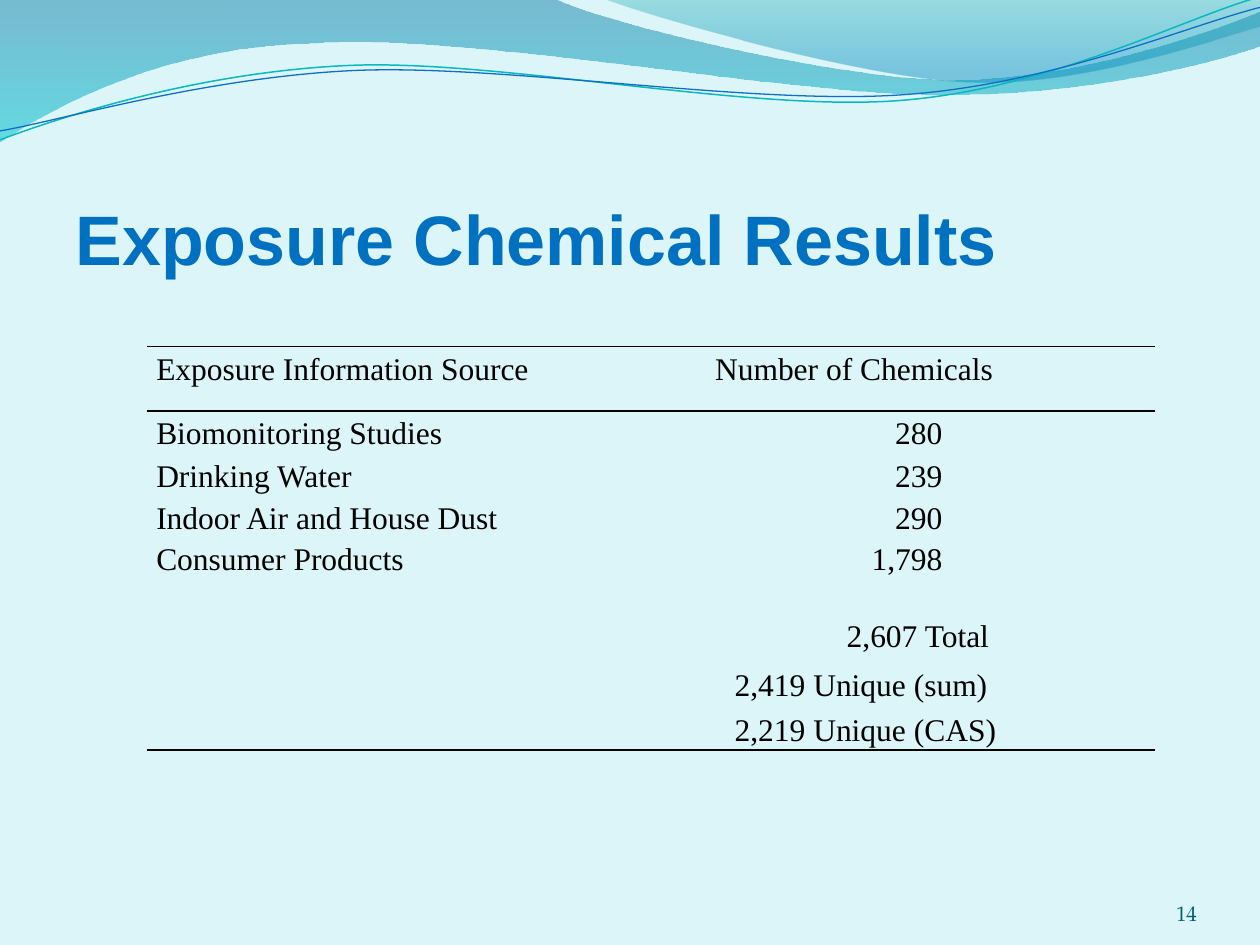
import lxml.etree
import pptx
import pptx.dml.color
import pptx.enum.text
import pptx.oxml.ns
import pptx.util

Cm, Pt = pptx.util.Cm, pptx.util.Pt
ALIGN, ANCHOR = pptx.enum.text.PP_ALIGN, pptx.enum.text.MSO_ANCHOR
qn = pptx.oxml.ns.qn

SERIF = "Times New Roman"
NO_GRID_STYLE = "{2D5ABB26-0587-4C30-8999-92F81FD0307C}"

# Outlines in cm: a start point, then straight steps (1 point) or curves (3 points)
BROAD_WAVE = [
    (0, 0), [(11.18, -0.03)],
    [(12.09, 0.43), (16.87, 1.6), (19.25, 1.6)],
    [(21.67, 1.6), (24.33, 0.66), (25.4, 0.23)],
    [(25.43, 0.91)],
    [(24.97, 1.12), (22.1, 1.93), (18.95, 1.91)],
    [(15.8, 1.91), (9.7, 0.71), (6.53, 0.86)],
    [(3.28, 0.91), (1.17, 2.11), (-0.03, 2.87)],
]
RIGHT_WAVE = [
    (12.17, -0.03),
    [(12.93, 0.28), (17.32, 1.57), (19.53, 1.65)],
    [(21.74, 1.75), (24.41, 0.81), (25.4, 0.53)],
    [(25.4, 0)],
]
TEAL_STRAND = [
    (0, 2.82),
    [(1.22, 2.36), (4.01, 1.45), (7.04, 1.32)],
    [(10.03, 1.19), (15.06, 2.26), (18.11, 2.03)],
    [(21.16, 1.8), (23.83, 0.38), (25.35, -0.05)],
]
BLUE_STRAND = [
    (0, 2.64),
    [(1.19, 2.44), (4.17, 1.55), (7.19, 1.42)],
    [(10.24, 1.3), (15.16, 2.13), (18.21, 1.91)],
    [(21.23, 1.7), (23.9, 0.53), (25.4, 0.15)],
]

# Source, count, row height, alignment, left and right margin of the count (cm)
ROWS = [
    ("Exposure Information Source", "Number of Chemicals", 1.3, ALIGN.CENTER, 0.19, 0.19),
    ("Biomonitoring Studies", "280", 0.87, ALIGN.RIGHT, 0.19, 4.28),
    ("Drinking Water", "239", 0.85, ALIGN.RIGHT, 0.19, 4.28),
    ("Indoor Air and House Dust", "290", 0.82, ALIGN.RIGHT, 0.19, 4.28),
    ("Consumer Products", "1,798", 0.84, ALIGN.RIGHT, 0.19, 4.28),
    ("", "", 0.71, ALIGN.LEFT, 0.19, 0.19),
    ("", "2,607 Total", 0.99, ALIGN.RIGHT, 0.19, 3.34),
    ("", "2,419 Unique (sum)", 0.91, ALIGN.LEFT, 3.65, 0.19),
    ("", "2,219 Unique (CAS)", 0.84, ALIGN.LEFT, 3.65, 0.19),
]


def colour(hex_string):
    return pptx.dml.color.RGBColor.from_string(hex_string)


def add_run(paragraph, text, font, size, hex_string, bold=False):
    run = paragraph.add_run()
    run.text = text
    run.font.name, run.font.size, run.font.bold = font, Pt(size), bold
    run.font.color.rgb = colour(hex_string)


def add_outline(slide, left, top, outline, close):
    start, *steps = outline
    place = lambda point: (Cm(left + point[0]), Cm(top + point[1]))
    builder = slide.shapes.build_freeform(*place(start))
    builder.add_line_segments([place(p) for step in steps for p in step], close=close)
    shape = builder.convert_to_shape()
    shape.shadow.inherit = False

    # Join the three points of each curved step into one Bézier segment
    segments = iter(list(shape.element.iter(qn("a:lnTo"))))
    for step in steps:
        first, *others = [next(segments) for _ in step]
        if others:
            first.addprevious(curve := lxml.etree.Element(qn("a:cubicBezTo")))
            for segment in (first, *others):
                curve.append(segment[0])
                segment.getparent().remove(segment)
    return shape


def add_waves(slide, left, top):
    # Translucent waves: position, colour and opacity of each gradient stop
    for outline, stops in [
        (BROAD_WAVE, [(0, "0074A1", 45), (1, "00C6CF", 55)]),
        (RIGHT_WAVE, [(0, "00A1A9", 30), (0.8, "008BBF", 45)]),
    ]:
        wave = add_outline(slide, left, top, outline, close=True)
        wave.line.fill.background()
        wave.fill.gradient()
        wave.fill.gradient_angle = 270
        for stop, (position, hex_string, _) in zip(wave.fill.gradient_stops, stops):
            stop.position = position
            stop.color.rgb = colour(hex_string)
        for tint, (_, _, opacity) in zip(wave.element.spPr.iter(qn("a:srgbClr")), stops):
            lxml.etree.SubElement(tint, qn("a:alpha"), val=str(opacity * 1000))

    # Thin strands
    for outline, hex_string, width in [(TEAL_STRAND, "0AB8BF", 0.85),
                                       (BLUE_STRAND, "0F6FC6", 0.75)]:
        strand = add_outline(slide, left, top, outline, close=False)
        strand.fill.background()
        strand.line.color.rgb = colour(hex_string)
        strand.line.width = Pt(width)


def place_title(slide, left, top, width, height):
    title = slide.shapes.title
    title.left, title.top, title.width, title.height = map(Cm, (left, top, width, height))
    frame = title.text_frame
    frame.word_wrap = True
    frame.vertical_anchor = ANCHOR.BOTTOM
    paragraph = frame.paragraphs[0]
    paragraph.alignment = ALIGN.LEFT
    add_run(paragraph, "Exposure Chemical Results", "Arial", 40, "0070C0", bold=True)


def add_rule(cell, side):
    rule = lxml.etree.SubElement(cell._tc.get_or_add_tcPr(), qn(f"a:ln{side}"), w=str(Pt(1)))
    fill = lxml.etree.SubElement(rule, qn("a:solidFill"))
    lxml.etree.SubElement(fill, qn("a:srgbClr"), val="000000")


def fill_cell(cell, text, align, left, right, rules):
    cell.margin_left, cell.margin_right = Cm(left), Cm(right)
    cell.margin_top = cell.margin_bottom = 0
    for side in rules:
        add_rule(cell, side)
    cell.fill.background()
    paragraph = cell.text_frame.paragraphs[0]
    paragraph.alignment = align
    if text:
        paragraph.line_spacing = 1.15
        add_run(paragraph, text, SERIF, 18, "000000")
    else:
        lxml.etree.SubElement(paragraph._p, qn("a:endParaRPr"), sz="1000")


def add_results_table(slide, left, top, width):
    height = sum(row[2] for row in ROWS)
    table = slide.shapes.add_table(len(ROWS), 2, *map(Cm, (left, top, width, height))).table
    table.first_row = table.horz_banding = False
    table._tbl.tblPr.find(qn("a:tableStyleId")).text = NO_GRID_STYLE
    source_width = 8.2
    table.columns[0].width = Cm(source_width)
    table.columns[1].width = Cm(width - source_width)

    # Rules stand above and below the header and below the last row
    rules = {0: "TB", len(ROWS) - 1: "B"}
    for i, (source, count, row_height, align, margin_left, margin_right) in enumerate(ROWS):
        table.rows[i].height = Cm(row_height)
        sides = rules.get(i, "")
        fill_cell(table.cell(i, 0), source, ALIGN.LEFT, 0.19, 0.19, sides)
        fill_cell(table.cell(i, 1), count, align, margin_left, margin_right, sides)


def add_page_number(slide, left, top, width, height):
    frame = slide.shapes.add_textbox(*map(Cm, (left, top, width, height))).text_frame
    frame.word_wrap = True
    frame.vertical_anchor = ANCHOR.BOTTOM
    frame.margin_left = frame.margin_right = frame.margin_top = frame.margin_bottom = 0
    frame.paragraphs[0].alignment = ALIGN.RIGHT
    add_run(frame.paragraphs[0], "14", "TeX Gyre Pagella", 12, "045D75")


def main():
    deck = pptx.Presentation()
    deck.slide_width, deck.slide_height = Cm(25.4), Cm(19.05)
    slide = deck.slides.add_slide(deck.slide_layouts[5])
    slide.background.fill.solid()
    slide.background.fill.fore_color.rgb = colour("DBF5F9")

    add_waves(slide, 0, 0)
    place_title(slide, 1.27, 3.81, 20.32, 1.96)
    add_results_table(slide, 2.96, 6.99, 20.32)
    add_page_number(slide, 22.02, 17.65, 2.11, 1.02)
    deck.save("out.pptx")


if __name__ == "__main__":
    main()
